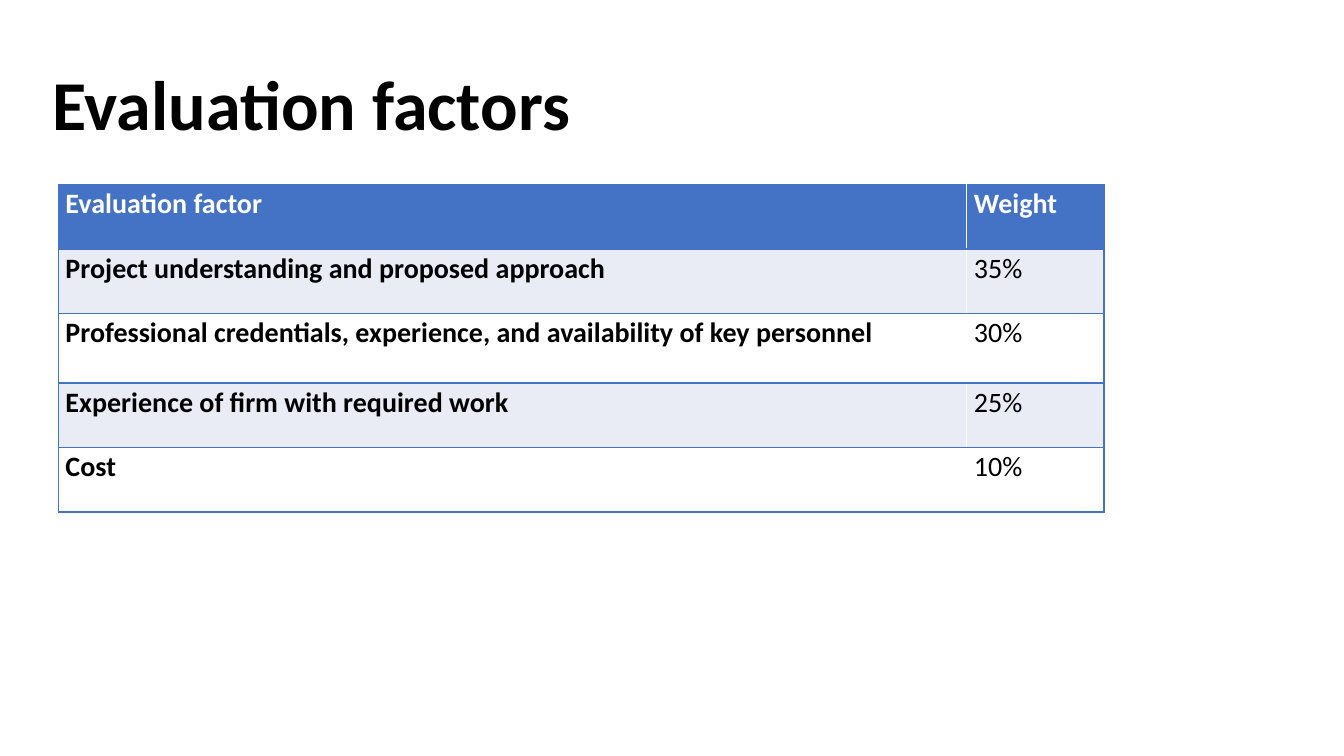
"""Build the evaluation factors slide with its table of weights."""
from lxml import etree
from pptx import Presentation
from pptx.dml.color import RGBColor
from pptx.enum import text
from pptx.oxml import ns
from pptx.util import Inches, Pt

BLUE, BAND, WHITE, BLACK = "4472C4", "E9EBF5", "FFFFFF", "000000"
COLUMN_WIDTHS = [9.01, 1.36]
ROW_HEIGHTS = [0.64, 0.64, 0.69, 0.64, 0.64]
ROWS = [
    ("Evaluation factor", "Weight"),
    ("Project understanding and proposed approach", "35%"),
    ("Professional credentials, experience, and availability of key personnel", "30%"),
    ("Experience of firm with required work", "25%"),
    ("Cost", "10%"),
]


def style_run(r, size, color, bold):
    """Set the font of one run."""
    r.font.name = "Calibri"
    r.font.size = Pt(size)
    r.font.bold = bold
    r.font.color.rgb = RGBColor.from_string(color)


def add_border(cell, side):
    """Draw a one-point blue line along one side of a cell."""
    tc_pr = cell._tc.get_or_add_tcPr()
    line = etree.SubElement(tc_pr, ns.qn(f"a:ln{side}"), w=str(Pt(1)))
    fill = etree.SubElement(line, ns.qn("a:solidFill"))
    etree.SubElement(fill, ns.qn("a:srgbClr"), val=BLUE)


prs = Presentation()
prs.slide_width, prs.slide_height = Inches(13.33), Inches(7.5)
s = prs.slides.add_slide(prs.slide_layouts[5])

title = s.shapes.title
title.left, title.top = Inches(0.42), Inches(0.64)
title.width, title.height = Inches(6), Inches(1.46)
tf = title.text_frame
tf.text = "Evaluation factors"
tf.word_wrap = True
tf.auto_size = text.MSO_AUTO_SIZE.NONE
tf.vertical_anchor = text.MSO_ANCHOR.TOP
p = tf.paragraphs[0]
p.alignment = text.PP_ALIGN.LEFT
p.line_spacing = 0.9
style_run(p.runs[0], 50, BLACK, True)

table = s.shapes.add_table(
    len(ROWS), len(COLUMN_WIDTHS), Inches(0.58), Inches(1.83),
    Inches(sum(COLUMN_WIDTHS)), Inches(sum(ROW_HEIGHTS))).table
for column, width in zip(table.columns, COLUMN_WIDTHS):
    column.width = Inches(width)

for i, (row, height) in enumerate(zip(ROWS, ROW_HEIGHTS)):
    table.rows[i].height = Inches(height)
    header = i == 0
    row_fill = BLUE if header else BAND if i % 2 else WHITE
    for j, (value, sides) in enumerate(zip(row, ("LTB", "RTB"))):
        cell = table.cell(i, j)
        cell.margin_left = cell.margin_right = Inches(0.07)
        cell.margin_top = cell.margin_bottom = 0
        for side in sides:
            add_border(cell, side)
        cell.fill.solid()
        cell.fill.fore_color.rgb = RGBColor.from_string(row_fill)
        cell.text_frame.text = value
        p = cell.text_frame.paragraphs[0]
        p.line_spacing = 1.07
        p.space_after = Pt(8)
        style_run(p.runs[0], 20, WHITE if header else BLACK, header or j == 0)

prs.save("out.pptx")
